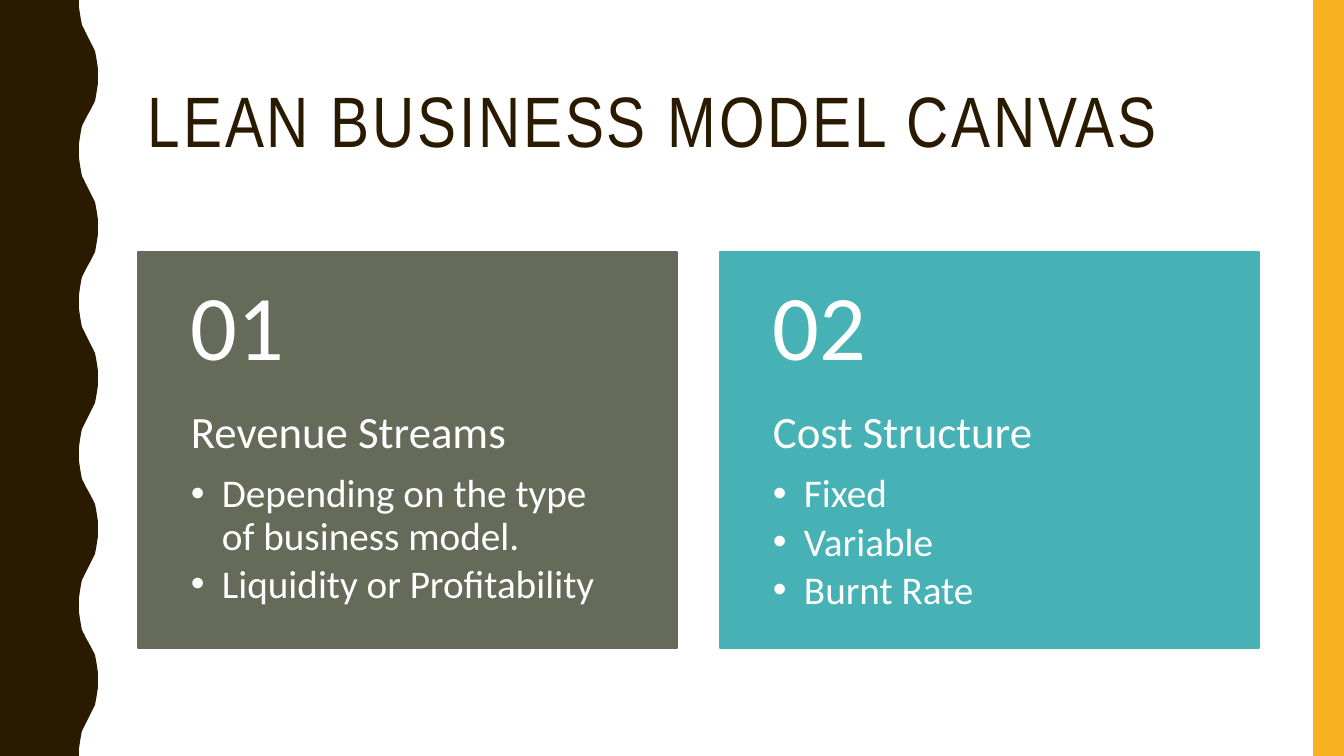
import lxml.etree
import pptx
import pptx.dml.color
import pptx.enum.shapes
import pptx.enum.text
import pptx.oxml.ns
import pptx.util

WIDTH, HEIGHT = 1344, 756
SCALE = pptx.util.Inches(1) / 100.8
COLOURS = {
    "brown": "2A1A00",
    "amber": "F8B323",
    "olive": "656A59",
    "teal": "46B2B5",
    "white": "FFFFFF",
}


def emu(px):
    return round(px * SCALE)


class SlideBuilder:
    def __init__(self, page):
        self.page = page
        self.body_font = "Calibri"
        self.title_font = "Arial Narrow"

    def colour(self, name):
        return pptx.dml.color.RGBColor.from_string(COLOURS[name])

    def paint(self, shape, fill, line_width=None):
        shape.shadow.inherit = False
        shape.fill.solid()
        shape.fill.fore_color.rgb = self.colour(fill)
        if line_width is None:
            shape.line.fill.background()
        else:
            shape.line.color.rgb = self.colour(fill)
            shape.line.width = pptx.util.Pt(line_width)

    def rectangle(self, left, top, width, height, fill, line_width=None):
        shape = self.page.shapes.add_shape(
            pptx.enum.shapes.MSO_SHAPE.RECTANGLE,
            emu(left), emu(top), emu(width), emu(height))
        self.paint(shape, fill, line_width)

    def outline(self, points, fill):
        builder = self.page.shapes.build_freeform(*points[0], scale=SCALE)
        builder.add_line_segments(points[1:], close=True)
        self.paint(builder.convert_to_shape(), fill)

    def text_box(self, left, top, width, height, insets, middle=False):
        box = self.page.shapes.add_textbox(
            emu(left), emu(top), emu(width), emu(height))
        frame = box.text_frame
        frame.word_wrap = True
        anchor = pptx.enum.text.MSO_ANCHOR
        frame.vertical_anchor = anchor.MIDDLE if middle else anchor.TOP
        side, above, below = insets
        frame.margin_left = frame.margin_right = emu(side)
        frame.margin_top = emu(above)
        frame.margin_bottom = emu(below)
        return frame

    def set_text(self, para, text, size, colour="white", font=None, after=0.0):
        para.text = text
        para.line_spacing = 0.9
        para.space_after = pptx.util.Pt(size * after)
        span = para.runs[0]
        span.font.name = font or self.body_font
        span.font.size = pptx.util.Pt(size)
        span.font.color.rgb = self.colour(colour)
        return span

    def bullet(self, para, indent):
        properties = para._p.get_or_add_pPr()
        properties.set("marL", str(emu(indent)))
        properties.set("indent", str(-emu(indent)))
        name = pptx.oxml.ns.qn
        lxml.etree.SubElement(properties, name("a:buFont"), typeface="Arial")
        lxml.etree.SubElement(properties, name("a:buChar"), char="•")

    def title(self, text):
        frame = self.text_box(138, 42, 1122, 164, (10, 5, 5), middle=True)
        span = self.set_text(frame.paragraphs[0], text, 51, "brown", self.title_font)
        span._r.get_or_add_rPr().set("spc", "200")

    def card(self, left, fill, number, heading, points):
        top, width, height, number_height = 252, 539, 396, 158
        self.rectangle(left, top, width, height, fill, line_width=1)
        frame = self.text_box(left, top + number_height, width,
                              height - number_height, (53, 0, 36))
        self.set_text(frame.paragraphs[0], heading, 32, after=0.35)
        for point in points:
            para = frame.add_paragraph()
            self.bullet(para, 31)
            self.set_text(para, point, 28, after=0.15)
        frame = self.text_box(left, top, width, number_height, (53, 18, 18), middle=True)
        self.set_text(frame.paragraphs[0], number, 66, after=0.35)

    def wavy_edge(self):
        period, waves = HEIGHT / 5, 5
        trough, crest = 79, 98
        quarter = [(79, 0), (79, 7), (80, 14), (81, 20), (82, 25), (84, 29), (86, 33)]
        half = quarter + [(trough + crest - x, period / 2 - y)
                          for x, y in reversed(quarter)]
        wave = half + [(x, period - y) for x, y in reversed(half)]
        edge = [(x, y + period * index) for index in range(waves) for x, y in wave]
        self.outline([(0, 0)] + edge + [(0, HEIGHT)], "brown")


def main():
    deck = pptx.Presentation()
    deck.slide_width, deck.slide_height = emu(WIDTH), emu(HEIGHT)
    page = deck.slides.add_slide(deck.slide_layouts[6])
    slide = SlideBuilder(page)
    slide.wavy_edge()
    slide.rectangle(1313, 0, 31, HEIGHT, "amber")
    slide.title("LEAN BUSINESS MODEL CANVAS")
    cards = [
        ("olive", "Revenue Streams",
         ["Depending on the type of business model.", "Liquidity or Profitability"]),
        ("teal", "Cost Structure", ["Fixed", "Variable", "Burnt Rate"]),
    ]
    for index, (fill, heading, points) in enumerate(cards):
        slide.card(138 + 582 * index, fill, f"{index + 1:02}", heading, points)
    deck.save("out.pptx")


if __name__ == "__main__":
    main()
